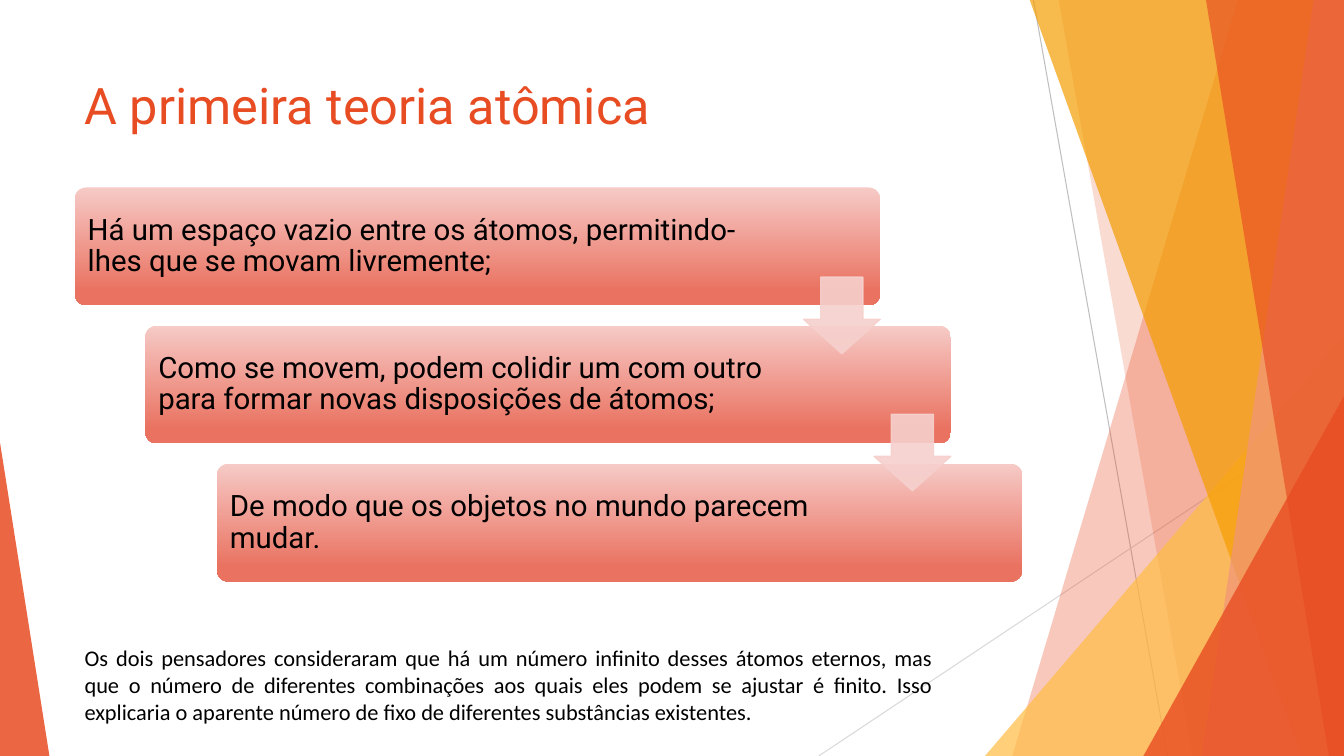
from dataclasses import dataclass

from lxml import etree
from pptx import Presentation
from pptx.dml.color import RGBColor
from pptx.enum.shapes import MSO_CONNECTOR, MSO_SHAPE
from pptx.enum.text import MSO_ANCHOR, PP_ALIGN
from pptx.oxml.ns import qn
from pptx.util import Pt

PX = 9144  # EMU per px, 100 px to the inch
PAGE_WIDTH, PAGE_HEIGHT = 1333, 750

STRAIGHT = MSO_CONNECTOR.STRAIGHT
TRIANGLE = MSO_SHAPE.ISOSCELES_TRIANGLE
ROUNDED = MSO_SHAPE.ROUNDED_RECTANGLE
DOWN_ARROW = MSO_SHAPE.DOWN_ARROW
TOP, MIDDLE = MSO_ANCHOR.TOP, MSO_ANCHOR.MIDDLE
LEFT, JUSTIFY = PP_ALIGN.LEFT, PP_ALIGN.JUSTIFY

BLACK = RGBColor(0x00, 0x00, 0x00)
ORANGE = RGBColor(0xE8, 0x4C, 0x22)
YELLOW = RGBColor(0xFF, 0xBD, 0x47)
AMBER = RGBColor(0xF4, 0x9D, 0x00)
SALMON = RGBColor(0xF1, 0x94, 0x7A)
GRAY = RGBColor(0xBF, 0xBF, 0xBF)
LIGHT_GRAY = RGBColor(0xD9, 0xD9, 0xD9)
STEP_TOP = RGBColor(0xF6, 0xCA, 0xC6)
STEP_BOTTOM = RGBColor(0xEA, 0x72, 0x61)
ARROW_PINK = RGBColor(0xF6, 0xD0, 0xCD)


@dataclass(frozen=True)
class Box:
    left: int
    top: int
    width: int
    height: int

    def emu(self) -> list[int]:
        return [n * PX for n in (self.left, self.top, self.width, self.height)]


@dataclass(frozen=True)
class Line:
    start: tuple[int, int]
    end: tuple[int, int]
    color: RGBColor


@dataclass(frozen=True)
class Band:
    """A facet from the top edge of the page to the bottom edge."""
    top_left: int
    bottom_left: int
    color: RGBColor
    opacity: int


@dataclass(frozen=True)
class Wedge:
    box: Box
    apex: float
    color: RGBColor
    opacity: int


@dataclass(frozen=True)
class Style:
    font: str
    size: int
    color: RGBColor
    anchor: MSO_ANCHOR = TOP
    align: PP_ALIGN = LEFT
    spacing: float = 1.0
    inset_x: int = 10
    inset_y: int = 5


@dataclass(frozen=True)
class Step:
    text: str
    text_width: int


LINES = [
    Line((1025, 0), (1158, 750), GRAY),
    Line((1333, 403), (812, 750), LIGHT_GRAY),
]
FACETS = [
    Band(1228, 1004, ORANGE, 30),
    Band(1050, 1183, ORANGE, 20),
    Wedge(Box(977, 333, 356, 417), 1, YELLOW, 72),
    Band(1021, 1291, AMBER, 70),
    Band(1303, 1192, SALMON, 70),
    Band(1196, 1318, ORANGE, 65),
    Wedge(Box(1134, 393, 199, 357), 1, ORANGE, 80),
    Wedge(Box(0, 439, 49, 311), 0, ORANGE, 85),
]
STEPS = [
    Step("Há um espaço vazio entre os átomos, permitindo-lhes que se movam livremente;", 672),
    Step("Como se movem, podem colidir um com outro para formar novas disposições de átomos;", 645),
    Step("De modo que os objetos no mundo parecem mudar.", 645),
]
CLOSING = (
    "Os dois pensadores consideraram que há um número infinito desses átomos eternos, "
    "mas que o número de diferentes combinações aos quais eles podem se ajustar é finito. "
    "Isso explicaria o aparente número de fixo de diferentes substâncias existentes."
)
TITLE_STYLE = Style("Roboto", 36, ORANGE, anchor=MIDDLE)
STEP_STYLE = Style("Roboto", 21, BLACK, anchor=MIDDLE, spacing=0.9, inset_x=9, inset_y=9)
CLOSING_STYLE = Style("Calibri", 16, BLACK, align=JUSTIFY)


def set_opacity(shape, percent: int) -> None:
    for color in shape.element.spPr.iter(qn("a:srgbClr")):
        etree.SubElement(color, qn("a:alpha")).set("val", str(percent * 1000))


def paint(shape, color: RGBColor, opacity: int) -> None:
    shape.shadow.inherit = False
    shape.fill.solid()
    shape.fill.fore_color.rgb = color
    shape.line.fill.background()
    set_opacity(shape, opacity)


def draw_line(page, line: Line) -> None:
    ends = [n * PX for n in (*line.start, *line.end)]
    connector = page.shapes.add_connector(STRAIGHT, *ends)
    connector.line.color.rgb = line.color
    connector.line.width = Pt(0.75)
    etree.SubElement(connector.element.spPr, qn("a:effectLst"))


def draw_facet(page, facet: Band | Wedge) -> None:
    if isinstance(facet, Band):
        builder = page.shapes.build_freeform(facet.top_left, -1, scale=PX)
        builder.add_line_segments([(PAGE_WIDTH, -1), (PAGE_WIDTH, PAGE_HEIGHT),
                                   (facet.bottom_left, PAGE_HEIGHT)], close=True)
        shape = builder.convert_to_shape()
    else:
        shape = page.shapes.add_shape(TRIANGLE, *facet.box.emu())
        shape.adjustments[0] = facet.apex
    paint(shape, facet.color, facet.opacity)


def draw_text(page, box: Box, text: str, style: Style) -> None:
    frame = page.shapes.add_textbox(*box.emu()).text_frame
    frame.word_wrap = True
    frame.vertical_anchor = style.anchor
    frame.margin_left = frame.margin_right = style.inset_x * PX
    frame.margin_top = frame.margin_bottom = style.inset_y * PX
    para = frame.paragraphs[0]
    para.text = text
    para.alignment = style.align
    para.line_spacing = style.spacing
    para.font.name = style.font
    para.font.size = Pt(style.size)
    para.font.color.rgb = style.color


def draw_step(page, index: int, step: Step) -> None:
    box = Box(74 + index * 141 // 2, 186 + index * 137, 799, 117)
    shape = page.shapes.add_shape(ROUNDED, *box.emu())
    shape.adjustments[0] = 0.1
    shape.shadow.inherit = False
    shape.line.fill.background()
    shape.fill.gradient()
    shape.fill.gradient_angle = 270
    first, last = shape.fill.gradient_stops
    first.color.rgb, first.position = STEP_TOP, 0
    last.color.rgb, last.position = STEP_BOTTOM, 0.88
    text_box = Box(box.left + 4, box.top + 3, step.text_width, 111)
    draw_text(page, text_box, step.text, STEP_STYLE)


def draw_arrow(page, index: int) -> None:
    box = Box(797 + index * 70, 275 + index * 136, 76, 76)
    arrow = page.shapes.add_shape(DOWN_ARROW, *box.emu())
    arrow.adjustments[0], arrow.adjustments[1] = 0.55, 0.45
    arrow.shadow.inherit = False
    arrow.fill.solid()
    arrow.fill.fore_color.rgb = ARROW_PINK
    arrow.line.color.rgb = ARROW_PINK
    arrow.line.width = Pt(1)
    set_opacity(arrow, 90)


def main() -> None:
    deck = Presentation()
    deck.slide_width, deck.slide_height = PAGE_WIDTH * PX, PAGE_HEIGHT * PX
    page = deck.slides.add_slide(deck.slide_layouts[6])

    # Background facets
    for line in LINES:
        draw_line(page, line)
    for facet in FACETS:
        draw_facet(page, facet)

    # Title
    draw_text(page, Box(74, 67, 940, 74), "A primeira teoria atômica", TITLE_STYLE)

    # Staircase of steps, then the arrows between them
    for index, step in enumerate(STEPS):
        draw_step(page, index, step)
    for index in range(len(STEPS) - 1):
        draw_arrow(page, index)

    # Closing paragraph
    draw_text(page, Box(74, 634, 861, 91), CLOSING, CLOSING_STYLE)

    deck.save("out.pptx")


if __name__ == "__main__":
    main()
